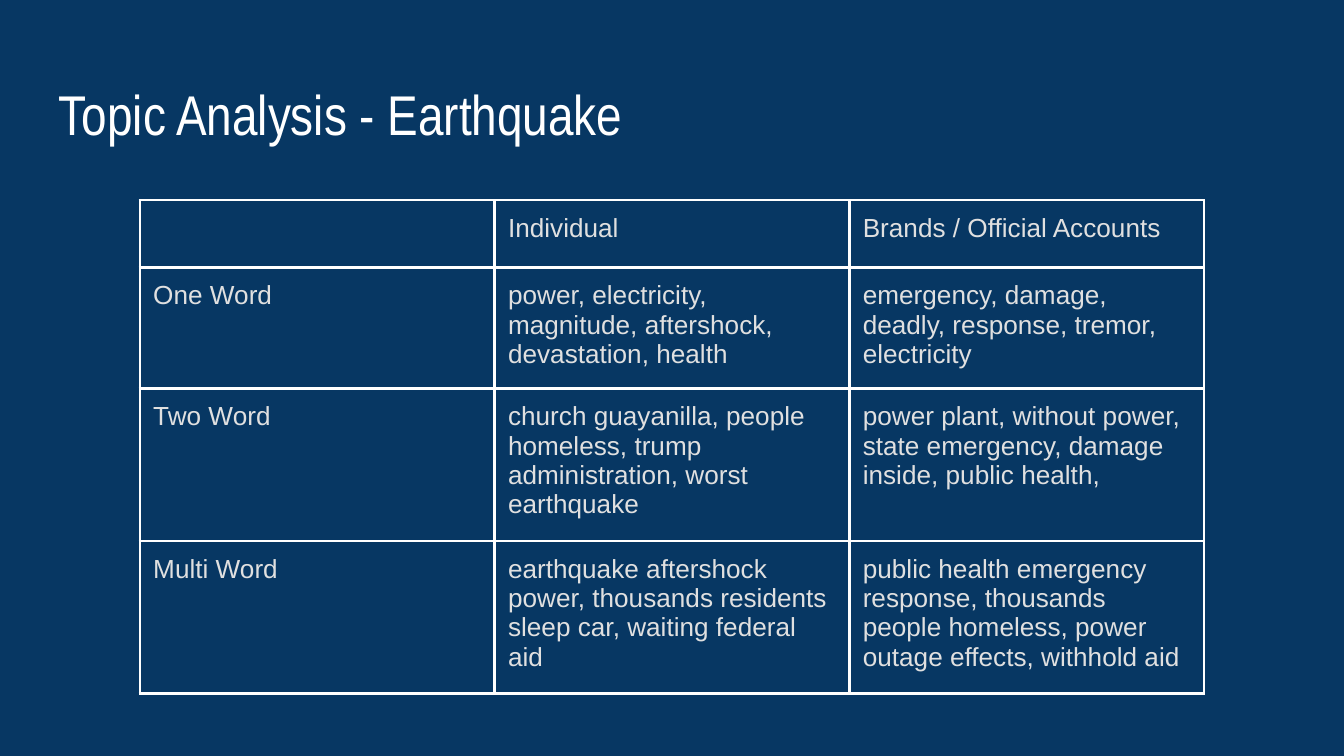
from dataclasses import dataclass

from lxml import etree
from pptx import Presentation
from pptx import util as u
from pptx.dml.color import RGBColor
from pptx.enum import text
from pptx.oxml import ns


@dataclass(frozen=True)
class Theme:
    background: RGBColor = RGBColor.from_string("073763")
    title: RGBColor = RGBColor.from_string("FFFFFF")
    body: RGBColor = RGBColor.from_string("E0E0E0")
    border: str = "FFFFFF"
    title_font: str = "Arial Narrow"
    body_font: str = "Arial"
    title_size: u.Pt = u.Pt(30)
    body_size: u.Pt = u.Pt(14)
    border_width: u.Pt = u.Pt(1.5)


theme = Theme()


def style_run(r, name, size, color):
    r.font.name, r.font.size = name, size
    r.font.color.rgb = color


def add_borders(cell):
    tcPr = cell._tc.get_or_add_tcPr()
    for i, side in enumerate(("lnL", "lnR", "lnT", "lnB")):
        ln = etree.Element(ns.qn(f"a:{side}"), w=str(theme.border_width))
        fill = etree.SubElement(ln, ns.qn("a:solidFill"))
        etree.SubElement(fill, ns.qn("a:srgbClr"), val=theme.border)
        tcPr.insert(i, ln)  # borders must precede the cell fill


prs = Presentation()
prs.slide_width = u.Inches(10)
prs.slide_height = prs.slide_width * 9 // 16
s = prs.slides.add_slide(prs.slide_layouts[6])
s.background.fill.solid()
s.background.fill.fore_color.rgb = theme.background
inset = u.Inches(0.1)

# Title
margin = u.Inches(0.34)
title = s.shapes.add_textbox(margin, u.Inches(0.49), prs.slide_width - 2 * margin, u.Inches(0.63))
tf = title.text_frame
tf.word_wrap = True
tf.vertical_anchor = text.MSO_ANCHOR.TOP
tf.margin_left = tf.margin_right = tf.margin_top = tf.margin_bottom = inset
tf.text = "Topic Analysis - Earthquake"
style_run(tf.paragraphs[0].runs[0], theme.title_font, theme.title_size, theme.title)

# Topic table, centred across the slide
topics = [
    ("", "Individual", "Brands / Official Accounts"),
    ("One Word",
     "power, electricity, magnitude, aftershock, devastation, health",
     "emergency, damage, deadly, response, tremor, electricity"),
    ("Two Word",
     "church guayanilla, people homeless, trump administration, worst earthquake",
     "power plant, without power, state emergency, damage inside, public health,"),
    ("Multi Word",
     "earthquake aftershock power, thousands residents sleep car, waiting federal aid",
     "public health emergency response, thousands people homeless, power outage effects, withhold aid"),
]
row_heights = [u.Inches(h) for h in (0.48, 0.89, 1.12, 1.12)]
col_width = u.Inches(2.64)
table_width = col_width * len(topics[0])
table = s.shapes.add_table(len(topics), len(topics[0]), (prs.slide_width - table_width) // 2,
                           u.Inches(1.49), table_width, sum(row_heights)).table
table.first_row = table.horz_banding = False
for column in table.columns:
    column.width = col_width

for i, (words, height) in enumerate(zip(topics, row_heights)):
    table.rows[i].height = height
    for j, word in enumerate(words):
        cell = table.cell(i, j)
        cell.fill.background()
        cell.margin_left = cell.margin_right = cell.margin_top = cell.margin_bottom = inset
        add_borders(cell)
        cell.text_frame.text = word
        for r in cell.text_frame.paragraphs[0].runs:
            style_run(r, theme.body_font, theme.body_size, theme.body)

prs.save("out.pptx")
